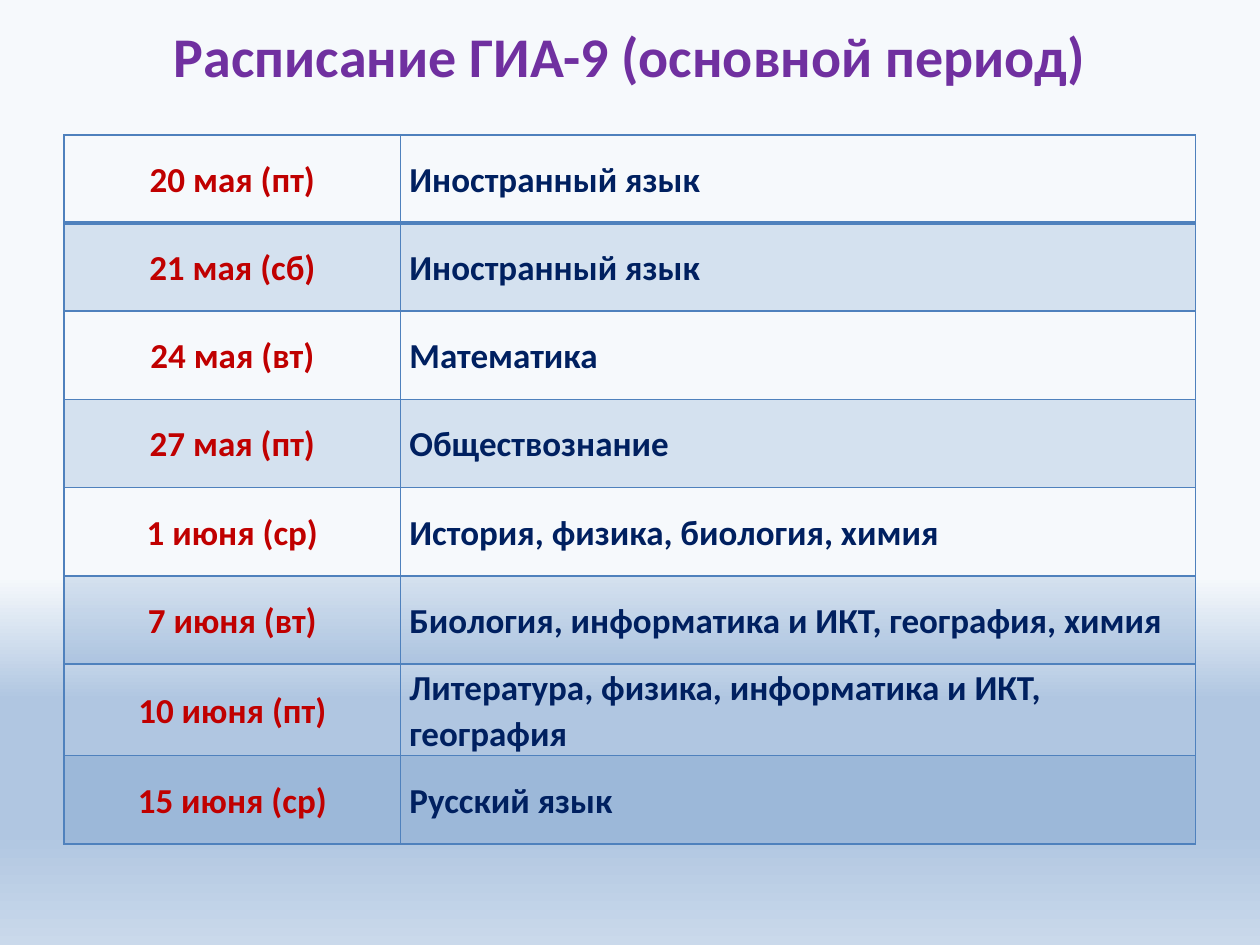
from lxml import etree
from pptx import Presentation
from pptx.dml.color import RGBColor
from pptx.enum import text
from pptx.oxml import ns
from pptx.util import Inches, Pt

TITLE = "Расписание ГИА-9 (основной период)"
SCHEDULE = [
    ("20 мая (пт)", "Иностранный язык"),
    ("21 мая (сб)", "Иностранный язык"),
    ("24 мая (вт)", "Математика"),
    ("27 мая (пт)", "Обществознание"),
    ("1 июня (ср)", "История, физика, биология, химия"),
    ("7 июня (вт)", "Биология, информатика и ИКТ, география, химия"),
    ("10 июня (пт)", "Литература, физика, информатика и ИКТ, география"),
    ("15 июня (ср)", "Русский язык"),
]
COLUMN_WIDTHS = (2.67, 6.31)
ROW_HEIGHT = 0.7
THEME = {
    "font": "Calibri",
    "title_size": 32,
    "cell_size": 20,
    "title": "7030A0",
    "date": "C00000",
    "subject": "002060",
    "accent": "4F81BD",
    "band_opacity": 20,
    "background": [(61, "F6F9FC"), (74, "B0C6E1"), (88, "B0C6E1"), (100, "CAD9EB")],
}


def add_node(parent, tag, **attrs):
    return etree.SubElement(parent, ns.qn(tag), {k: str(v) for k, v in attrs.items()})


def write(tf, content, *, size, color, align, spacing=None):
    p = tf.paragraphs[0]
    p.alignment = align
    p.line_spacing = spacing
    r = p.add_run()
    r.text = content
    r.font.name = THEME["font"]
    r.font.size = Pt(size)
    r.font.bold = True
    r.font.color.rgb = RGBColor.from_string(color)


def set_background(slide, stops):
    """Fill the slide with a top-to-bottom gradient."""
    slide.background.fill.gradient()
    grad = slide.element.find(".//" + ns.qn("a:gradFill"))
    for child in list(grad):
        grad.remove(child)
    stop_list = add_node(grad, "a:gsLst")
    for percent, color in stops:
        stop = add_node(stop_list, "a:gs", pos=percent * 1000)
        add_node(stop, "a:srgbClr", val=color)
    add_node(grad, "a:lin", ang=90 * 60000, scaled=0)


def set_borders(cell, **widths):
    """Draw the four sides (L, R, T, B) with the given widths in points."""
    tc_pr = cell._tc.get_or_add_tcPr()
    for i, side in enumerate("LRTB"):
        ln = add_node(tc_pr, "a:ln" + side, w=Pt(widths.get(side, 1)))
        add_node(add_node(ln, "a:solidFill"), "a:srgbClr", val=THEME["accent"])
        tc_pr.insert(i, ln)


def set_band(cell, banded):
    if not banded:
        cell.fill.background()
        return
    cell.fill.solid()
    cell.fill.fore_color.rgb = RGBColor.from_string(THEME["accent"])
    color = cell._tc.tcPr.find(ns.qn("a:solidFill") + "/" + ns.qn("a:srgbClr"))
    add_node(color, "a:alpha", val=THEME["band_opacity"] * 1000)


def add_schedule(slide):
    frame = slide.shapes.add_table(
        len(SCHEDULE), len(COLUMN_WIDTHS), Inches(0.51), Inches(1.07),
        Inches(sum(COLUMN_WIDTHS)), Inches(ROW_HEIGHT * len(SCHEDULE)))
    table = frame.table
    table.first_row = table.horz_banding = False
    for column, width in zip(table.columns, COLUMN_WIDTHS):
        column.width = Inches(width)
    formats = [(THEME["date"], text.PP_ALIGN.CENTER),
               (THEME["subject"], text.PP_ALIGN.LEFT)]
    for i, row in enumerate(SCHEDULE):
        table.rows[i].height = Inches(ROW_HEIGHT)
        for j, (content, (color, align)) in enumerate(zip(row, formats)):
            cell = table.cell(i, j)
            cell.vertical_anchor = text.MSO_ANCHOR.MIDDLE
            cell.margin_left = cell.margin_right = Inches(0.07)
            cell.margin_top = cell.margin_bottom = 0
            write(cell.text_frame, content, size=THEME["cell_size"],
                  color=color, align=align, spacing=1.07)
            set_band(cell, banded=i % 2 == 1)
            # The line under the first row is the heavy one.
            set_borders(cell, T=2 if i == 1 else 1, B=2 if i == 0 else 1)


def main():
    prs = Presentation()
    prs.slide_width, prs.slide_height = Inches(10), Inches(7.5)
    slide = prs.slides.add_slide(prs.slide_layouts.get_by_name("Title Only"))
    set_background(slide, THEME["background"])

    title = slide.shapes.title
    title.left, title.top = Inches(0.5), Inches(-0.11)
    title.width, title.height = Inches(9), Inches(1.1)
    title.text_frame.vertical_anchor = text.MSO_ANCHOR.MIDDLE
    write(title.text_frame, TITLE, size=THEME["title_size"],
          color=THEME["title"], align=text.PP_ALIGN.CENTER)

    add_schedule(slide)
    prs.save("out.pptx")


if __name__ == "__main__":
    main()
